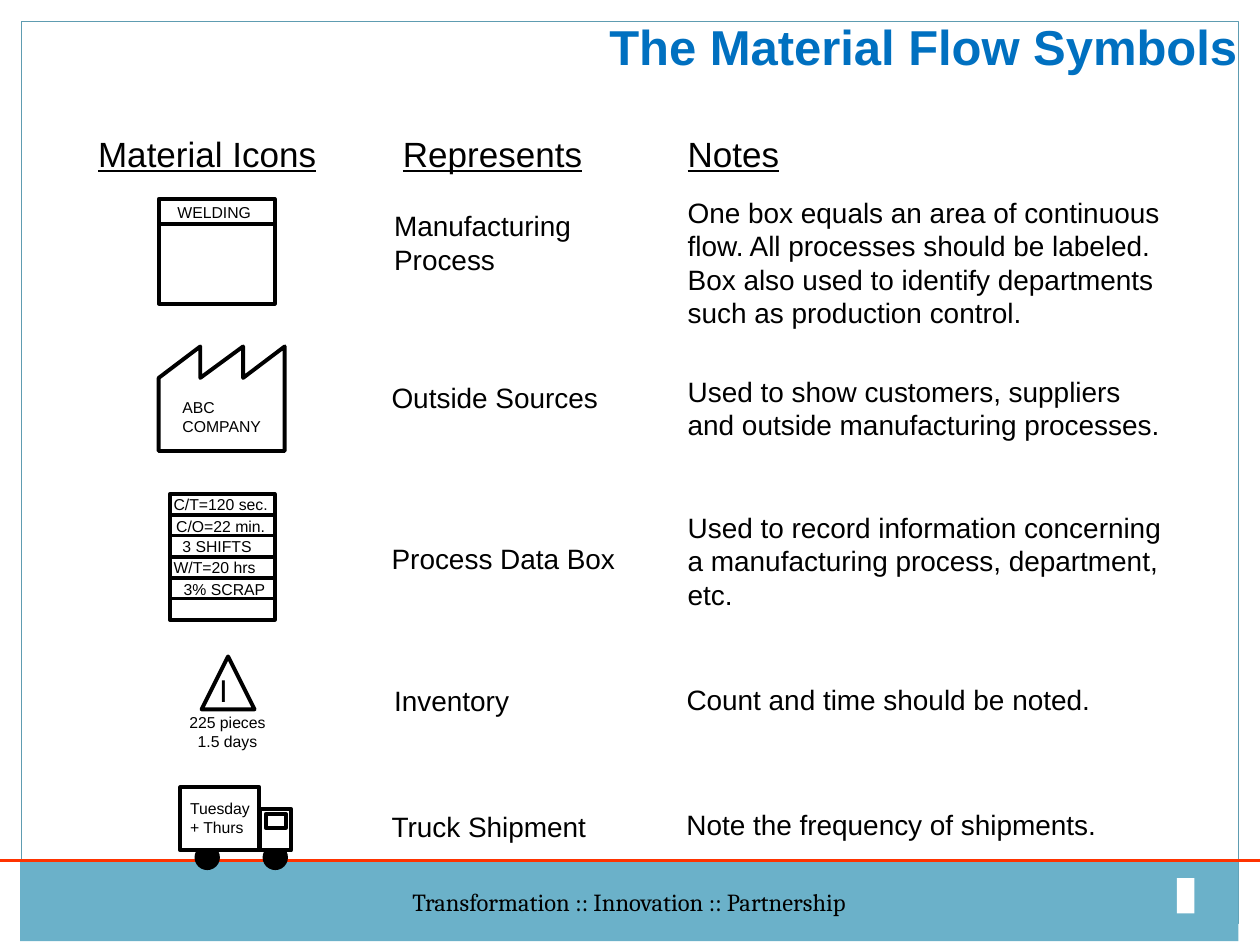
from lxml.etree import SubElement
from pptx import Presentation
from pptx.dml.color import RGBColor
from pptx.enum.shapes import MSO_CONNECTOR, MSO_SHAPE
from pptx.enum.text import MSO_ANCHOR, MSO_AUTO_SIZE, PP_ALIGN
from pptx.oxml.ns import qn
from pptx.util import Pt

PX = 9144
BLACK, WHITE = "000000", "FFFFFF"
ICON_LINE = 2.25


def px(*lengths):
    """Turn px lengths, 100 to the inch, into EMU."""
    return [length * PX for length in lengths]


def color(value):
    """Return the colour of a hex string."""
    return RGBColor.from_string(value)


def write(shape, text, size=16, font="Arial", ink=BLACK, bold=False, underline=False,
          align=PP_ALIGN.LEFT, anchor=MSO_ANCHOR.TOP, wrap=False, grow=True):
    """Fill a shape with one paragraph for each line of text."""
    frame = shape.text_frame
    frame.word_wrap = wrap
    frame.auto_size = MSO_AUTO_SIZE.SHAPE_TO_FIT_TEXT if grow else MSO_AUTO_SIZE.NONE
    frame.vertical_anchor = anchor
    for index, line in enumerate(text.split("\n")):
        para = frame.add_paragraph() if index else frame.paragraphs[0]
        para.alignment = align
        span = para.add_run()
        span.text = line
        span.font.size = Pt(size)
        span.font.name = font
        span.font.bold = bold
        span.font.underline = underline
        span.font.color.rgb = color(ink)


def add_text(page, box, text, **style):
    """Place a text box."""
    write(page.shapes.add_textbox(*px(*box)), text, **style)


def paint(shape, fill=WHITE, line=BLACK, width=ICON_LINE):
    """Set the fill and outline of a shape, either of which may be None."""
    shape.shadow.inherit = False
    if fill:
        shape.fill.solid()
        shape.fill.fore_color.rgb = color(fill)
    else:
        shape.fill.background()
    if line:
        shape.line.color.rgb = color(line)
        shape.line.width = Pt(width)
    else:
        shape.line.fill.background()


def add_shape(page, kind, box, **style):
    """Place a painted preset shape."""
    shape = page.shapes.add_shape(kind, *px(*box))
    paint(shape, **style)
    return shape


def add_line(page, left, top, right, bottom, ink=BLACK, width=ICON_LINE):
    """Draw a straight line."""
    line = page.shapes.add_connector(MSO_CONNECTOR.STRAIGHT, *px(left, top, right, bottom))
    line.line.color.rgb = color(ink)
    line.line.width = Pt(width)
    SubElement(line._element.spPr, qn("a:effectLst"))


def add_frame(page):
    """Draw the page border, footer band and red rule."""
    rectangle = MSO_SHAPE.RECTANGLE
    add_shape(page, rectangle, (17, 17, 966, 716), fill=None, line="5E9CB1", width=0.75)
    footer = add_shape(page, rectangle, (16, 684, 967, 63), fill="6BB1C9", line=None)
    write(footer, "Transformation :: Innovation :: Partnership", size=14, font="Cambria",
          align=PP_ALIGN.CENTER, anchor=MSO_ANCHOR.MIDDLE, grow=False)
    add_shape(page, rectangle, (934, 697, 14, 28), line=None)
    add_line(page, 0, 683, 1000, 683, ink="FF3300", width=2)


def add_title(page, box, text):
    """Move and format the title placeholder."""
    title = page.shapes.title
    title.left, title.top, title.width, title.height = px(*box)
    write(title, text, size=28, ink="0070C0", bold=True, align=PP_ALIGN.RIGHT,
          wrap=True, grow=False)


def add_process_icon(page, left, top, width, height):
    """Draw the manufacturing process box."""
    add_shape(page, MSO_SHAPE.RECTANGLE, (left, top, width, height))
    add_line(page, left, top + 20, left + width, top + 20)
    add_text(page, (left + 5, top - 2, 82, 25), "WELDING", size=9)


def add_factory_icon(page, left, top, width, height):
    """Draw the factory with a three-tooth roof."""
    eave = 25
    points = [(left, top + eave)]
    for tooth in (1, 2, 3):
        peak = left + round(width * tooth / 3)
        points += [(peak, top), (peak, top + eave)]
    points[-1:] = [(left + width, top + height), (left, top + height)]
    builder = page.shapes.build_freeform(*points[0], scale=PX)
    builder.add_line_segments(points[1:], close=True)
    paint(builder.convert_to_shape())
    add_text(page, (left + 9, top + 36, 84, 40), "ABC\nCOMPANY", size=9)


def add_data_icon(page, left, top, width, height):
    """Draw the six-row process data box."""
    entries = [("C/T=120 sec.", -7, 96), ("C/O=22 min.", -5, 92), ("3 SHIFTS", 0, 76),
               ("W/T=20 hrs", -7, 86), ("3% SCRAP", 1, 85)]
    add_shape(page, MSO_SHAPE.RECTANGLE, (left, top, width, height))
    for index, (text, shift, text_width) in enumerate(entries):
        row_top = top + round(index * height / 6)
        rule = top + round((index + 1) * height / 6)
        add_line(page, left, rule, left + width, rule)
        add_text(page, (left + shift, row_top - 4, text_width, 25), text, size=9)


def add_inventory_icon(page, left, top, width, height):
    """Draw the inventory triangle and its count."""
    add_shape(page, MSO_SHAPE.ISOSCELES_TRIANGLE, (left, top, width, height))
    add_text(page, (left + 4, top + 7, 27, 40), "I", size=18)
    add_text(page, (left - 20, top + 40, 81, 40), "225 pieces\n1.5 days", size=9,
             align=PP_ALIGN.CENTER)


def add_truck_icon(page, left, top, width, height):
    """Draw the truck with its delivery days."""
    for offset in (13, 67):
        add_shape(page, MSO_SHAPE.OVAL, (left + offset, top + height - 17, 17, 17), fill=BLACK)
    for part in ((0, 0, 63, 50), (63, 17, width - 63, 33), (68, 21, 16, 11)):
        add_shape(page, MSO_SHAPE.RECTANGLE, (left + part[0], top + part[1], *part[2:]))
    add_text(page, (left - 2, top + 4, 69, 40), "Tuesday\n+ Thurs", size=9)


def add_symbol(page, draw_icon, icon_box, name, name_box, note, note_box):
    """Place one row: icon, name and note."""
    draw_icon(page, *icon_box)
    add_text(page, name_box, name, wrap=name == "Manufacturing Process")
    add_text(page, note_box, note)


HEADINGS = [("Material Icons", 68, 195), ("Represents", 310, 164), ("Notes", 536, 93)]
SYMBOLS = [
    (add_process_icon, (126, 158, 92, 83), "Manufacturing Process", (303, 161, 204, 64),
     "One box equals an area of continuous\nflow. All processes should be labeled.\n"
     "Box also used to identify departments\nsuch as production control.",
     (536, 150, 396, 117)),
    (add_factory_icon, (126, 275, 100, 83), "Outside Sources", (301, 297, 184, 37),
     "Used to show customers, suppliers\nand outside manufacturing processes.",
     (536, 292, 396, 64)),
    (add_data_icon, (135, 392, 83, 100), "Process Data Box", (301, 425, 198, 37),
     "Used to record information concerning\na manufacturing process, department,\netc.",
     (536, 400, 397, 90)),
    (add_inventory_icon, (160, 521, 42, 42), "Inventory", (303, 538, 112, 37),
     "Count and time should be noted.", (535, 537, 341, 37)),
    (add_truck_icon, (143, 625, 88, 64), "Truck Shipment", (301, 638, 176, 37),
     "Note the frequency of shipments.", (535, 636, 347, 37)),
]


def main():
    """Build and save the deck."""
    deck = Presentation()
    deck.slide_width, deck.slide_height = px(1000, 750)
    page = deck.slides.add_slide(deck.slide_layouts[5])
    add_frame(page)
    add_title(page, (92, 8, 900, 57), "The Material Flow Symbols")
    for text, left, width in HEADINGS:
        add_text(page, (left, 100, width, 44), text, size=20, underline=True)
    for symbol in SYMBOLS:
        add_symbol(page, *symbol)
    deck.save("out.pptx")


if __name__ == "__main__":
    main()
